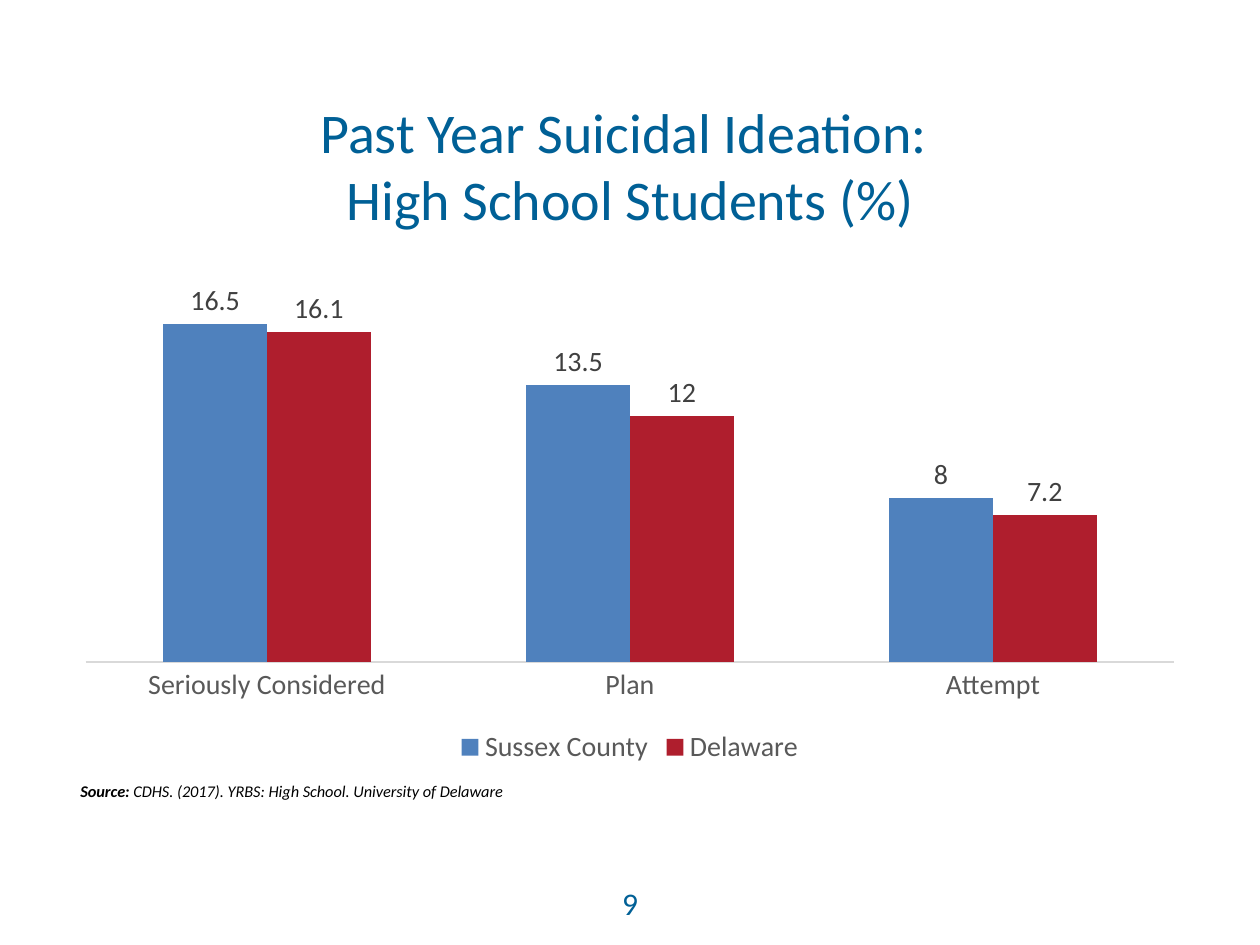
from dataclasses import dataclass

from pptx import Presentation as Deck
from pptx.chart.data import CategoryChartData as Data
from pptx.dml.color import RGBColor as Rgb
from pptx.enum.chart import XL_CHART_TYPE as Kind
from pptx.enum.chart import XL_LABEL_POSITION as Spot
from pptx.enum.chart import XL_LEGEND_POSITION as Side
from pptx.enum.chart import XL_TICK_LABEL_POSITION as Place
from pptx.enum.chart import XL_TICK_MARK as Tick
from pptx.enum.text import MSO_ANCHOR as Anchor
from pptx.enum.text import PP_ALIGN as Align
from pptx.util import Inches, Pt

COLS, ROWS = 60, 45
WIDE = Inches(7.5)
HIGH = WIDE * ROWS // COLS
FACE = "Calibri"
NAVY, GREY, DARK, BLACK = "006096", "595959", "404040", "000000"


@dataclass(frozen=True)
class Box:
    col: float
    row: float
    cols: float
    rows: float

    def rect(self) -> tuple[int, int, int, int]:
        return (
            round(WIDE * self.col / COLS),
            round(HIGH * self.row / ROWS),
            round(WIDE * self.cols / COLS),
            round(HIGH * self.rows / ROWS),
        )


@dataclass(frozen=True)
class Group:
    name: str
    hue: str
    rates: tuple[float, ...]


@dataclass(frozen=True)
class Run:
    text: str
    bold: bool = False


ACTS = ("Seriously Considered", "Plan", "Attempt")
GROUPS = (
    Group("Sussex County", "4F81BD", (16.5, 13.5, 8)),
    Group("Delaware", "AF1E2D", (16.1, 12, 7.2)),
)


def paint(hue: str) -> Rgb:
    return Rgb.from_string(hue)


def style(font, size: float, hue: str) -> None:
    font.name, font.size = FACE, Pt(size)
    font.color.rgb = paint(hue)


def write(slide, box: Box, *runs: Run, size: float, hue: str,
          align=Align.LEFT, anchor=Anchor.TOP, slant: bool = False,
          top: float = 0.05, base: float = 0.05) -> None:
    frame = slide.shapes.add_textbox(*box.rect()).text_frame
    frame.word_wrap = True
    frame.vertical_anchor = anchor
    frame.margin_top, frame.margin_bottom = Inches(top), Inches(base)
    para = frame.paragraphs[0]
    para.alignment = align
    for item in runs:
        for step, line in enumerate(item.text.split("\n")):
            if step:
                para.add_line_break()
            run = para.add_run()
            run.text = line
            style(run.font, size, hue)
            run.font.bold, run.font.italic = item.bold, slant


def plot(slide, box: Box) -> None:
    data = Data()
    data.categories = ACTS
    for group in GROUPS:
        data.add_series(group.name, group.rates)
    chart = slide.shapes.add_chart(
        Kind.COLUMN_CLUSTERED, *box.rect(), data).chart
    style(chart.font, 10, BLACK)
    chart.has_title = False
    chart.has_legend = True
    chart.legend.position = Side.BOTTOM
    chart.legend.include_in_layout = False
    style(chart.legend.font, 12, GREY)

    base = chart.category_axis
    base.major_tick_mark = base.minor_tick_mark = Tick.NONE
    base.tick_label_position = Place.NEXT_TO_AXIS
    base.format.line.color.rgb = paint("D9D9D9")
    base.format.line.width = Pt(0.75)
    style(base.tick_labels.font, 12, GREY)

    scale = chart.value_axis
    scale.visible = False
    scale.has_major_gridlines = False
    scale.minimum_scale, scale.maximum_scale = 0, 18

    bars = chart.plots[0]
    bars.gap_width, bars.overlap = 150, 0
    bars.vary_by_categories = False
    for group, row in zip(GROUPS, bars.series):
        row.format.fill.solid()
        row.format.fill.fore_color.rgb = paint(group.hue)
        row.invert_if_negative = False
        tags = row.data_labels
        tags.show_value = True
        tags.position = Spot.OUTSIDE_END
        style(tags.font, 12, DARK)


def main() -> None:
    deck = Deck()
    deck.slide_width, deck.slide_height = WIDE, HIGH
    slide = deck.slides.add_slide(deck.slide_layouts[6])
    write(slide, Box(23, 41.7, 14, 2.4), Run("9"),
          size=13.5, hue=NAVY, align=Align.CENTER)
    write(slide, Box(3, 4.5, 54, 6.5),
          Run("Past Year Suicidal Ideation: \nHigh School Students (%)"),
          size=24, hue=NAVY, align=Align.CENTER, anchor=Anchor.MIDDLE,
          top=0.02, base=0)
    write(slide, Box(3.04, 36.8, 53, 1.8), Run("Source: ", bold=True),
          Run("CDHS. (2017). YRBS: High School. University of Delaware"),
          size=7, hue=BLACK, slant=True)
    plot(slide, Box(3, 13.5, 54, 23.2))
    deck.save("out.pptx")


if __name__ == "__main__":
    main()
